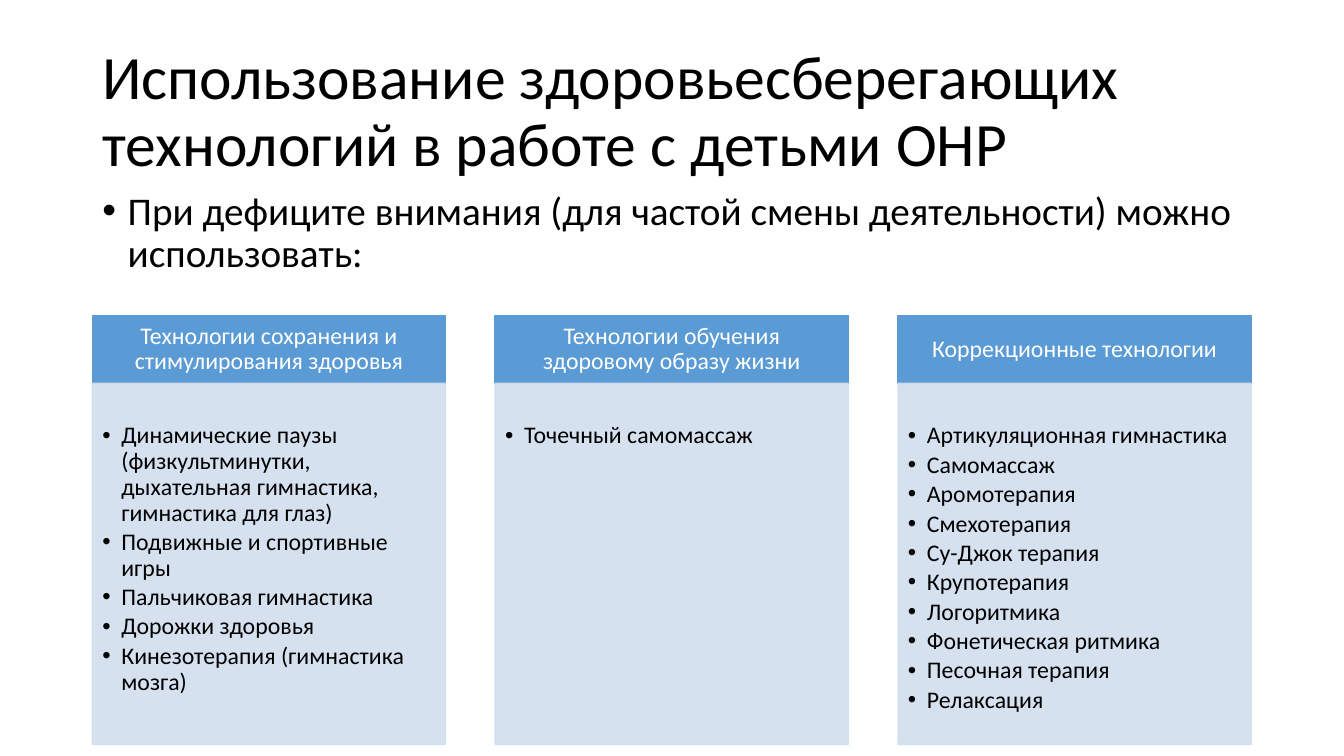
from lxml import etree
from pptx import Presentation
from pptx import util as u
from pptx.dml.color import RGBColor
from pptx.enum import shapes, text
from pptx.oxml import ns

BLACK = RGBColor(0x00, 0x00, 0x00)
WHITE = RGBColor(0xFF, 0xFF, 0xFF)
HEADER_BLUE = RGBColor(0x5B, 0x9B, 0xD5)
PANEL_BLUE = RGBColor(0xD2, 0xDE, 0xEF)

LEFT, CONTENT_WIDTH = 2.33, 29.21
COLUMN_PITCH, COLUMN_WIDTH = 10.15, 8.9
HEADER_TOP, HEADER_HEIGHT = 7.95, 1.71
PANEL_HEIGHT = 9.1

TECHNOLOGIES = [
    ("Технологии сохранения и стимулирования здоровья", [
        "Динамические паузы (физкультминутки, дыхательная гимнастика, гимнастика для глаз)",
        "Подвижные и спортивные игры",
        "Пальчиковая гимнастика",
        "Дорожки здоровья",
        "Кинезотерапия (гимнастика мозга)",
    ]),
    ("Технологии обучения здоровому образу жизни", ["Точечный самомассаж"]),
    ("Коррекционные технологии", [
        "Артикуляционная гимнастика",
        "Самомассаж",
        "Аромотерапия",
        "Смехотерапия",
        "Су-Джок терапия",
        "Крупотерапия",
        "Логоритмика",
        "Фонетическая ритмика",
        "Песочная терапия",
        "Релаксация",
    ]),
]


def write(frame, lines, size, color=BLACK, align=text.PP_ALIGN.LEFT,
          anchor=text.MSO_ANCHOR.TOP, margins=(0.25, 0.13, 0.25, 0.13),
          bullet_indent=None, space_after=0):
    frame.word_wrap = True
    frame.vertical_anchor = anchor
    (frame.margin_left, frame.margin_top,
     frame.margin_right, frame.margin_bottom) = map(u.Cm, margins)
    for index, line in enumerate(lines):
        paragraph = frame.paragraphs[0] if index == 0 else frame.add_paragraph()
        if bullet_indent:
            properties = paragraph._p.get_or_add_pPr()
            properties.set("marL", str(u.Cm(bullet_indent)))
            properties.set("indent", str(-u.Cm(bullet_indent)))
            etree.SubElement(properties, ns.qn("a:buFont"), typeface="Arial")
            etree.SubElement(properties, ns.qn("a:buChar"), char="•")
        paragraph.alignment = align
        paragraph.line_spacing = 0.9
        paragraph.space_after = u.Pt(space_after)
        run = paragraph.add_run()
        run.text = line
        run.font.name = "Calibri"
        run.font.size = u.Pt(size)
        run.font.color.rgb = color


class SlideBuilder:
    def __init__(self, slide):
        self.slide = slide

    def text_box(self, left, top, width, height, lines, **style):
        box = self.slide.shapes.add_textbox(*map(u.Cm, (left, top, width, height)))
        write(box.text_frame, lines, **style)

    def rectangle(self, left, top, width, height, fill, lines, opacity=100, **style):
        block = self.slide.shapes.add_shape(
            shapes.MSO_SHAPE.RECTANGLE, *map(u.Cm, (left, top, width, height)))
        block.shadow.inherit = False
        block.line.width = u.Pt(1)
        for paint in (block.fill, block.line.fill):
            paint.solid()
            paint.fore_color.rgb = fill
        if opacity < 100:
            for tint in block._element.spPr.iter(ns.qn("a:srgbClr")):
                etree.SubElement(tint, ns.qn("a:alpha"), val=str(opacity * 1000))
        write(block.text_frame, lines, **style)

    def column(self, left, heading, methods):
        self.rectangle(left, HEADER_TOP, COLUMN_WIDTH, HEADER_HEIGHT, HEADER_BLUE,
                       [heading], size=17, color=WHITE, align=text.PP_ALIGN.CENTER,
                       anchor=text.MSO_ANCHOR.MIDDLE, margins=(0.33, 0.2, 0.33, 0.2))
        self.rectangle(left, HEADER_TOP + HEADER_HEIGHT, COLUMN_WIDTH, PANEL_HEIGHT,
                       PANEL_BLUE, methods, opacity=90, size=17,
                       margins=(0.25, 1.01, 0.33, 0.38),
                       bullet_indent=0.48, space_after=2.6)


def main():
    deck = Presentation()
    deck.slide_width, deck.slide_height = u.Cm(33.87), u.Cm(19.05)
    builder = SlideBuilder(deck.slides.add_slide(deck.slide_layouts[6]))
    builder.text_box(
        LEFT, 1.01, CONTENT_WIDTH, 3.68,
        ["Использование здоровьесберегающих технологий в работе с детьми ОНР"],
        size=44, anchor=text.MSO_ANCHOR.MIDDLE)
    builder.text_box(
        LEFT, 4.7, CONTENT_WIDTH, 12.47,
        ["При дефиците внимания (для частой смены деятельности) можно использовать:"],
        size=28, bullet_indent=0.64)
    for index, (heading, methods) in enumerate(TECHNOLOGIES):
        builder.column(LEFT + index * COLUMN_PITCH, heading, methods)
    deck.save("out.pptx")


if __name__ == "__main__":
    main()
